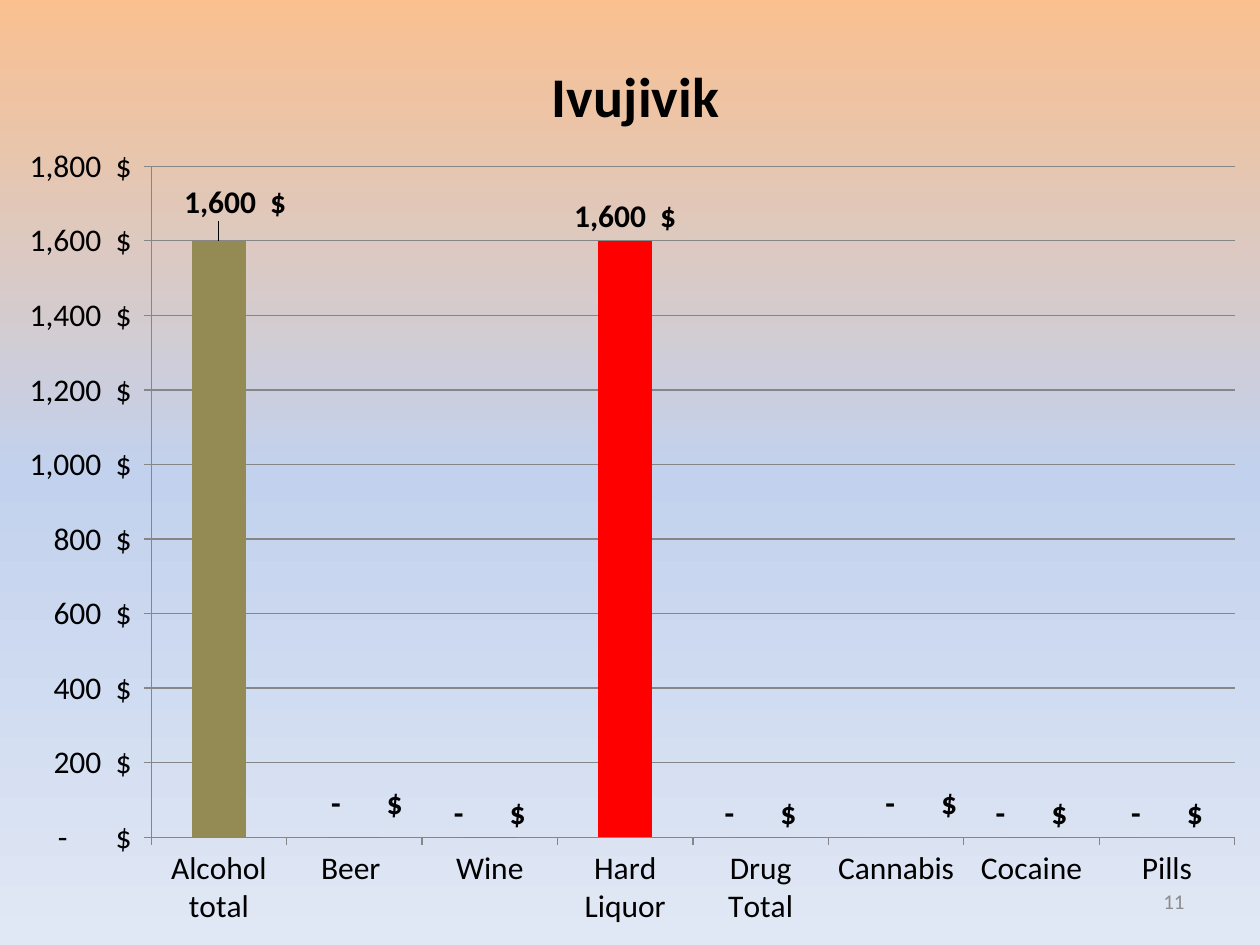
from copy import deepcopy

from lxml import etree
from pptx import Presentation
from pptx import util as u
from pptx.chart import data as chart_data
from pptx.dml.color import RGBColor
from pptx.enum import chart as ce
from pptx.enum import text
from pptx.oxml import ns

BLACK = RGBColor(0, 0, 0)
GREY = RGBColor(0x8C, 0x8C, 0x8C)
LINE_GREY = RGBColor(0x86, 0x86, 0x86)
BLUE = RGBColor(0x4F, 0x81, 0xBD)
BACKGROUND = [(0, RGBColor(0xFA, 0xC0, 0x90)),
              (0.5, RGBColor(0xC2, 0xD1, 0xED)),
              (1, RGBColor(0xE1, 0xE8, 0xF5))]
FONT = "Calibri"
MONEY = (r'_ * #,##0_)\ "$"_ ;_ * \(#,##0\)\ "$"_ ;'
         r'_ * "-"??_)\ "$"_ ;_ @_ ')

SPENDING = [  # category, dollars, bar colour
    ("Alcohol total", 1600, RGBColor(0x94, 0x8A, 0x54)),
    ("Beer ", 0, RGBColor(0x60, 0x4A, 0x7B)),
    ("Wine", 0, RGBColor(0x95, 0x37, 0x35)),
    ("Hard Liquor", 1600, RGBColor(0xFF, 0, 0)),
    ("Drug Total", 0, BLUE),
    ("Cannabis", 0, RGBColor(0x9B, 0xBB, 0x59)),
    ("Cocaine", 0, RGBColor(0x80, 0x64, 0xA2)),
    ("Pills", 0, RGBColor(0xF7, 0x96, 0x46)),
]
LABEL_SHIFTS = {0: (0.013, -0.015), 1: (0.01, -0.01), 5: (0.02, -0.01)}


def paint_background(page):
    fill = page.background.fill
    fill.gradient()
    fill.gradient_angle = 270
    stop_list = page._element.find(".//" + ns.qn("a:gsLst"))
    stop_list.append(deepcopy(stop_list[-1]))
    for stop, (position, color) in zip(fill.gradient_stops, BACKGROUND):
        stop.position = position
        stop.color.rgb = color


def set_layout(parent, index, **values):
    """Give a chart part a manual layout, as fractions of the chart."""
    for old in parent.findall(ns.qn("c:layout")):
        parent.remove(old)
    layout = etree.Element(ns.qn("c:layout"))
    manual = etree.SubElement(layout, ns.qn("c:manualLayout"))
    for name, value in values.items():
        etree.SubElement(manual, ns.qn("c:" + name)).set("val", str(value))
    parent.insert(index, layout)


def style_axes(chart):
    for axis in (chart.category_axis, chart.value_axis):
        axis.major_tick_mark = ce.XL_TICK_MARK.OUTSIDE
        axis.format.line.color.rgb = LINE_GREY
        axis.format.line.width = u.Pt(0.75)
    axis = chart.value_axis
    axis.minimum_scale, axis.maximum_scale, axis.major_unit = 0, 1800, 200
    axis.has_major_gridlines = True
    axis.major_gridlines.format.line.color.rgb = LINE_GREY
    axis.major_gridlines.format.line.width = u.Pt(0.75)
    axis.tick_labels.number_format = MONEY
    axis.tick_labels.number_format_is_linked = False


def style_label_font(font):
    font.bold = True
    font.size = u.Pt(18)
    font.name = FONT
    font.color.rgb = BLACK


def style_bars(plot):
    plot.gap_width = 150
    plot.vary_by_categories = False
    series = plot.series[0]
    series.format.fill.solid()
    series.format.fill.fore_color.rgb = BLUE
    for index, (_, _, color) in enumerate(SPENDING):
        fill = series.points[index].format.fill
        fill.solid()
        fill.fore_color.rgb = color

    labels = series.data_labels
    labels.show_value = True
    labels.number_format = MONEY
    labels.number_format_is_linked = False
    labels.position = ce.XL_LABEL_POSITION.OUTSIDE_END
    style_label_font(labels.font)
    for index, (x, y) in LABEL_SHIFTS.items():
        label = series.points[index].data_label
        style_label_font(label.font)
        label.position = ce.XL_LABEL_POSITION.OUTSIDE_END
    for element in labels._element.findall(ns.qn("c:dLbl")):
        x, y = LABEL_SHIFTS[int(element.find(ns.qn("c:idx")).get("val"))]
        set_layout(element, 1, x=x, y=y)
        number = etree.Element(ns.qn("c:numFmt"), formatCode=MONEY, sourceLinked="0")
        element.insert(2, number)


def add_spending_chart(page, left, top, width, height):
    data = chart_data.CategoryChartData(number_format=MONEY)
    data.categories = [name for name, _, _ in SPENDING]
    data.add_series("Ivujivik", [dollars for _, dollars, _ in SPENDING])
    chart = page.shapes.add_chart(ce.XL_CHART_TYPE.COLUMN_CLUSTERED,
                                  left, top, width, height, data).chart
    chart.has_legend = False
    chart.font.size = u.Pt(18)
    chart.font.name = FONT
    chart.font.color.rgb = BLACK

    chart.has_title = True
    title = chart.chart_title
    title.include_in_layout = False
    title.text_frame.text = "Ivujivik"
    font = title.text_frame.paragraphs[0].font
    font.size, font.bold, font.name = u.Pt(32), True, FONT
    font.color.rgb = BLACK
    set_layout(title._element, 1, xMode="edge", yMode="edge", x=0.43, y=0.05)

    style_axes(chart)
    style_bars(chart.plots[0])
    plot_area = chart._chartSpace.find(".//" + ns.qn("c:plotArea"))
    set_layout(plot_area, 0, layoutTarget="inner", xMode="edge", yMode="edge",
               x=0.12, y=0.176, w=0.86, h=0.71)


def add_page_number(page, left, top, width, height):
    frame = page.shapes.add_textbox(left, top, width, height).text_frame
    frame.word_wrap = True
    frame.vertical_anchor = text.MSO_ANCHOR.MIDDLE
    para = frame.paragraphs[0]
    para.text = "11"
    para.alignment = text.PP_ALIGN.RIGHT
    para.font.size, para.font.name = u.Pt(12), FONT
    para.font.color.rgb = GREY


def main():
    deck = Presentation()
    deck.slide_width, deck.slide_height = u.Cm(25.4), u.Cm(19.05)
    page = deck.slides.add_slide(deck.slide_layouts[6])
    paint_background(page)
    add_spending_chart(page, 0, 0, deck.slide_width, deck.slide_height)
    add_page_number(page, u.Cm(18.2), u.Cm(17.66), u.Cm(5.93), u.Cm(1.01))
    deck.save("out.pptx")


if __name__ == "__main__":
    main()
